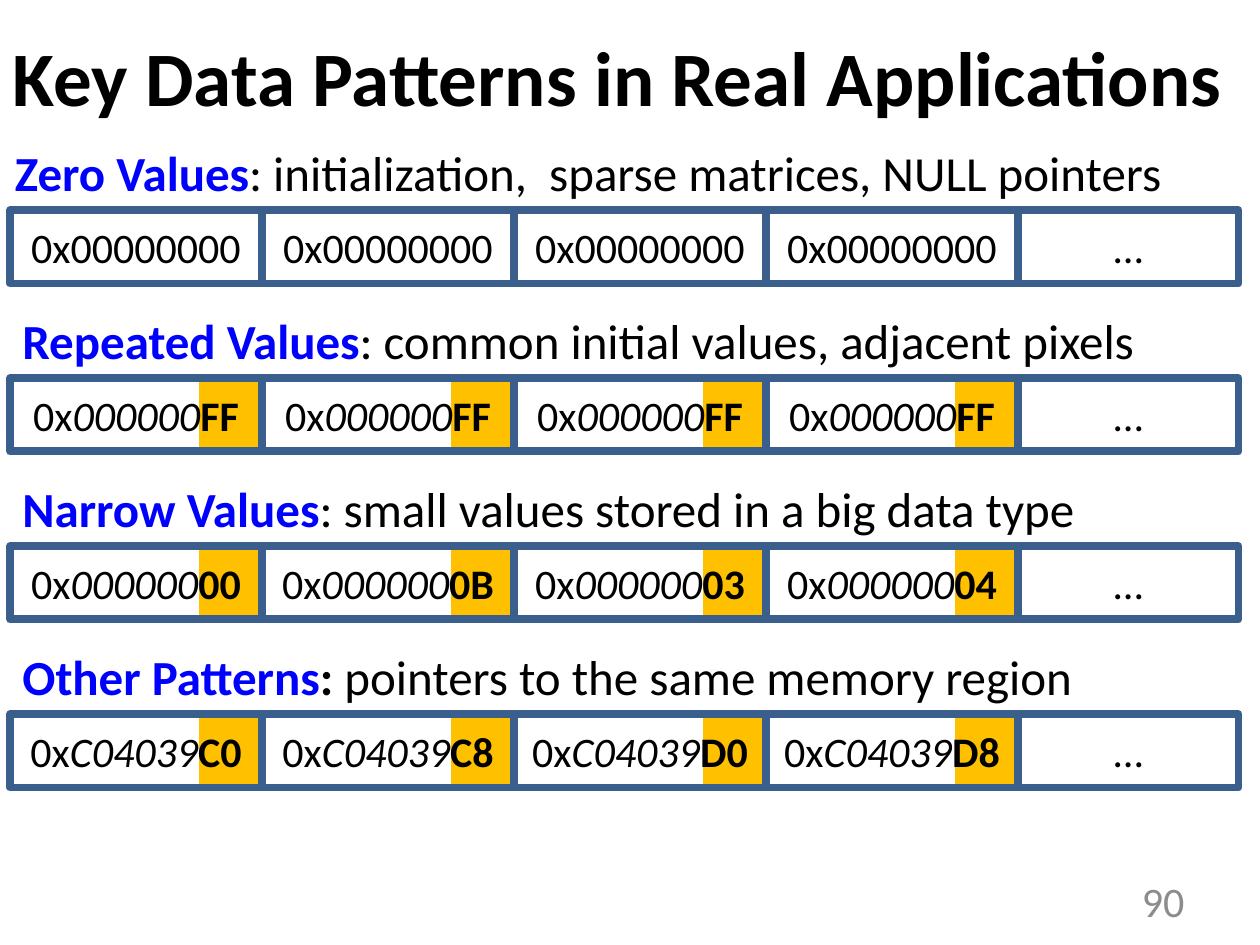
from pptx import Presentation
from pptx.dml.color import RGBColor
from pptx.enum.shapes import MSO_SHAPE
from pptx.enum.text import MSO_ANCHOR, MSO_AUTO_SIZE, PP_ALIGN
from pptx.util import Inches, Pt

HUES = {"text": "000000", "key": "0000FF", "mark": "FFC000",
        "edge": "3A5F8C", "page": "8C8C8C"}

# Label runs, shared digits, and the low byte of each word
ROWS = [
    ([("Zero Values", "key", True),
      (": initialization,  sparse matrices, NULL pointers", "text", False)],
     "00000000", ["", "", "", ""]),
    ([("Repeated Values", "key", True),
      (": common initial values, adjacent pixels", "text", False)],
     "000000", ["FF", "FF", "FF", "FF"]),
    ([("Narrow Values", "key", True),
      (": small values stored in a big data type", "text", False)],
     "000000", ["00", "0B", "03", "04"]),
    ([("Other Patterns", "key", True), (": ", "text", True),
      ("pointers to the same memory region", "text", False)],
     "C04039", ["C0", "C8", "D0", "D8"]),
]
LEFT, TOP, PITCH = 0.08, 1.67, 4 / 3
WIDE, LAST, HIGH, MARK = 2, 1.75, 0.58, 0.5
RISE = 0.59  # label top above its row of cells


def hue(name):
    return RGBColor.from_string(HUES[name])


def add_run(para, text, size, color="text", **style):
    run = para.add_run()
    run.text = text
    form = {"name": "Calibri", "size": Pt(size), **style}
    for key, value in form.items():
        setattr(run.font, key, value)
    run.font.color.rgb = hue(color)


def set_frame(frame, anchor, align):
    form = {"word_wrap": True, "auto_size": MSO_AUTO_SIZE.NONE,
            "vertical_anchor": anchor}
    for key, value in form.items():
        setattr(frame, key, value)
    para = frame.paragraphs[0]
    para.alignment = align
    return para


def add_rect(slide, box):
    rect = slide.shapes.add_shape(MSO_SHAPE.RECTANGLE, *map(Inches, box))
    rect.shadow.inherit = False
    return rect


def add_text(slide, box, anchor, align):
    area = slide.shapes.add_textbox(*map(Inches, box))
    return set_frame(area.text_frame, anchor, align)


def add_title(slide, box, text):
    title = slide.shapes.title
    for key, value in zip(("left", "top", "width", "height"), box):
        setattr(title, key, Inches(value))
    para = set_frame(title.text_frame, MSO_ANCHOR.MIDDLE, PP_ALIGN.LEFT)
    add_run(para, text, 44, bold=True)


def add_mark(slide, box):
    x, y, w, h = box
    mark = add_rect(slide, (x + w - MARK, y, MARK, h))
    mark.fill.solid()
    mark.fill.fore_color.rgb = hue("mark")
    mark.line.fill.background()


def add_cell(slide, box, parts):
    cell = add_rect(slide, box)
    cell.fill.background()
    cell.line.color.rgb = hue("edge")
    cell.line.width = Pt(4.5)
    para = set_frame(cell.text_frame, MSO_ANCHOR.MIDDLE, PP_ALIGN.CENTER)
    for text, style in parts:
        add_run(para, text, 24, **style)


def add_row(slide, x, y, label, base, tails):
    boxes = [(x + i * WIDE, y, WIDE, HIGH) for i in range(len(tails))]
    # Low-byte marks sit behind the cells
    for box, tail in zip(boxes, tails):
        if tail:
            add_mark(slide, box)
    # Word cells, then the trailing cell
    for box, tail in zip(boxes, tails):
        if tail:
            parts = [("0x", {}), (base, {"italic": True}),
                     (tail, {"bold": True})]
        else:
            parts = [("0x" + base, {})]
        add_cell(slide, box, parts)
    add_cell(slide, (x + len(tails) * WIDE, y, LAST, HIGH), [("…", {})])
    # Label; the first one starts a little further left
    start = x if any(tails) else x - 0.06
    para = add_text(slide, (start, y - RISE, 9.5, 0.75),
                    MSO_ANCHOR.TOP, PP_ALIGN.LEFT)
    for text, color, bold in label:
        add_run(para, text, 28, color, bold=bold)


def add_page(slide, box, text):
    para = add_text(slide, box, MSO_ANCHOR.MIDDLE, PP_ALIGN.RIGHT)
    add_run(para, text, 24, "page")


def main():
    deck = Presentation()
    deck.slide_width, deck.slide_height = Inches(10), Inches(7.5)
    slide = deck.slides.add_slide(deck.slide_layouts[5])
    add_title(slide, (0, 0.03, 10, 1.14),
              "Key Data Patterns in Real Applications")
    for i, row in enumerate(ROWS):
        add_row(slide, LEFT, TOP + i * PITCH, *row)
    add_page(slide, (7.17, 6.95, 2.33, 0.4), "90")
    deck.save("out.pptx")


if __name__ == "__main__":
    main()
